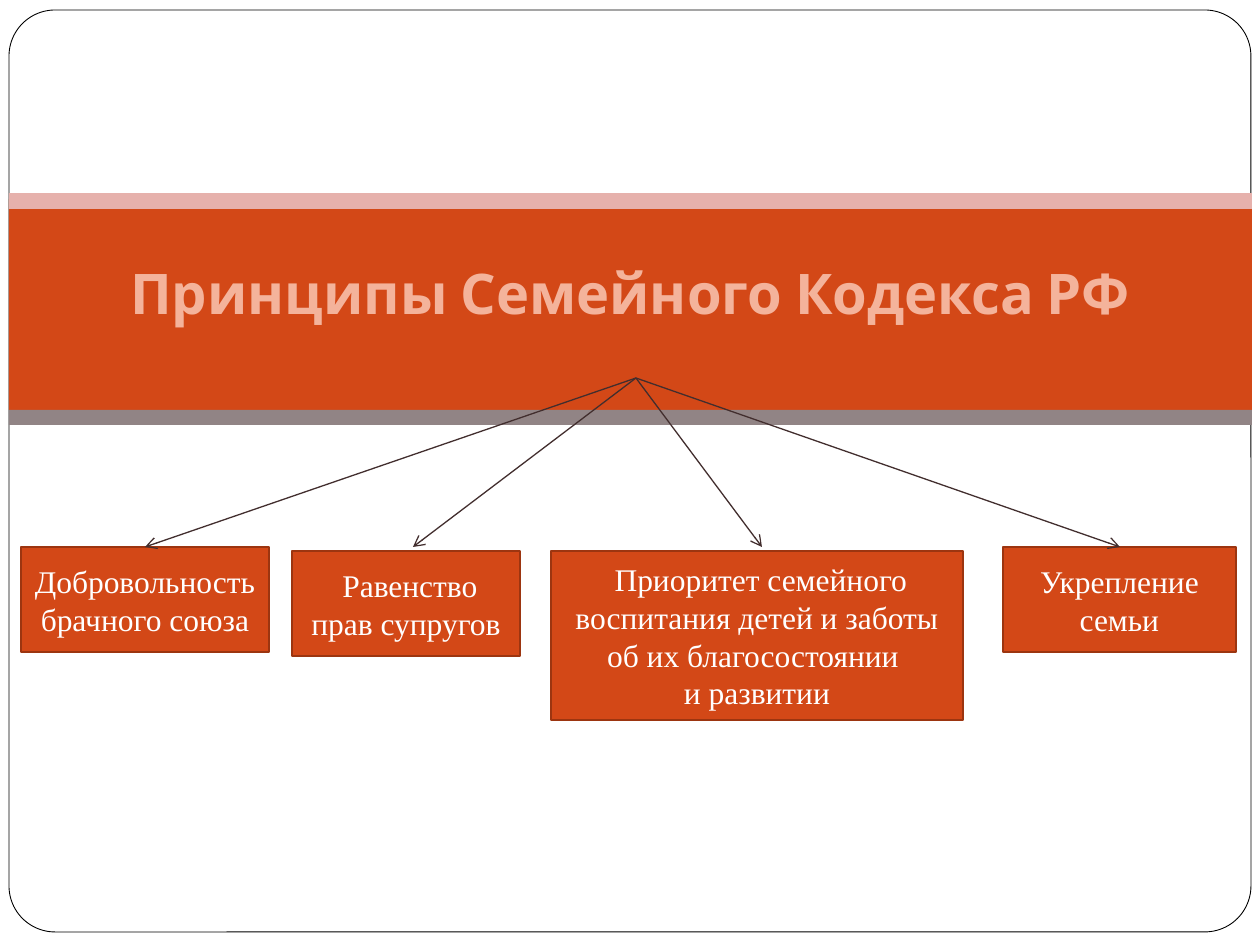
from dataclasses import dataclass

from lxml import etree
from pptx import Presentation
from pptx.dml.color import RGBColor
from pptx.enum.shapes import MSO_CONNECTOR, MSO_SHAPE
from pptx.enum.text import MSO_ANCHOR, PP_ALIGN
from pptx.oxml.ns import qn
from pptx.util import Emu, Pt

RECT = MSO_SHAPE.RECTANGLE
ROUND = MSO_SHAPE.ROUNDED_RECTANGLE
LINE = MSO_CONNECTOR.STRAIGHT
TOP = MSO_ANCHOR.TOP
MIDDLE = MSO_ANCHOR.MIDDLE
CENTER = PP_ALIGN.CENTER

SCALE = 914400 / 126
ORANGE = "D34817"
RUST = "9C3510"
BROWN = "422E2E"
WHITE = "FFFFFF"
START = (636, 378)
TIP_Y = 547


@dataclass
class Band:
    top: int
    height: int
    fill: str


@dataclass
class Box:
    left: int
    top: int
    width: int
    height: int
    tip: int
    text: str


BANDS = [
    Band(199, 211, ORANGE),
    Band(193, 16, "E6B1AC"),
    Band(410, 15, "918485"),
]

BOXES = [
    Box(21, 547, 248, 105, 145, "Добровольность брачного союза"),
    Box(292, 551, 228, 105, 413, " Равенство прав супругов"),
    Box(551, 551, 412, 169, 762,
        " Приоритет семейного воспитания детей и заботы"
        " об их благосостоянии \nи развитии"),
    Box(1003, 547, 233, 105, 1120, "Укрепление семьи"),
]


def px(n: int) -> Emu:
    return Emu(round(n * SCALE))


def color(code: str) -> RGBColor:
    return RGBColor.from_string(code)


def write(shape, text: str, *, font: str, size: int, ink: str,
          bold: bool = False, anchor=MIDDLE) -> None:
    frame = shape.text_frame
    frame.word_wrap = True
    frame.vertical_anchor = anchor
    frame.text = text
    for para in frame.paragraphs:
        para.alignment = CENTER
        for run in para.runs:
            run.font.name = font
            run.font.size = Pt(size)
            run.font.bold = bold
            run.font.color.rgb = color(ink)


def block(slide, kind, left: int, top: int, width: int, height: int, *,
          fill: str, edge: str = "", weight: float = 1):
    shape = slide.shapes.add_shape(
        kind, px(left), px(top), px(width), px(height))
    shape.shadow.inherit = False
    shape.fill.solid()
    shape.fill.fore_color.rgb = color(fill)
    if edge:
        shape.line.color.rgb = color(edge)
        shape.line.width = Pt(weight)
    else:
        shape.line.fill.background()
    return shape


def arrow(slide, tip: int) -> None:
    x, y = START
    link = slide.shapes.add_connector(LINE, px(x), px(y), px(tip), px(TIP_Y))
    link.line.color.rgb = color(BROWN)
    link.line.width = Pt(0.75)
    etree.SubElement(link.line._get_or_add_ln(), qn("a:tailEnd"), type="arrow")
    etree.SubElement(link._element.spPr, qn("a:effectLst"))


def main() -> None:
    deck = Presentation()
    deck.slide_width = px(1260)
    deck.slide_height = px(945)
    slide = deck.slides.add_slide(deck.slide_layouts[6])

    frame = block(slide, ROUND, 9, 10, 1242, 922,
                  fill=WHITE, edge="000000", weight=0.5)
    frame.adjustments[0] = 0.05
    for band in BANDS:
        block(slide, RECT, 9, band.top, 1243, band.height, fill=band.fill)

    title = slide.shapes.add_textbox(px(32), px(252), px(1197), px(126))
    write(title, "Принципы Семейного Кодекса РФ", font="Cabin", size=32,
          ink="F4B39B", bold=True, anchor=TOP)

    for box in BOXES:
        shape = block(slide, RECT, box.left, box.top, box.width, box.height,
                      fill=ORANGE, edge=RUST)
        write(shape, box.text, font="Times New Roman", size=18, ink=WHITE)
    for box in BOXES:
        arrow(slide, box.tip)

    deck.save("out.pptx")


if __name__ == "__main__":
    main()
